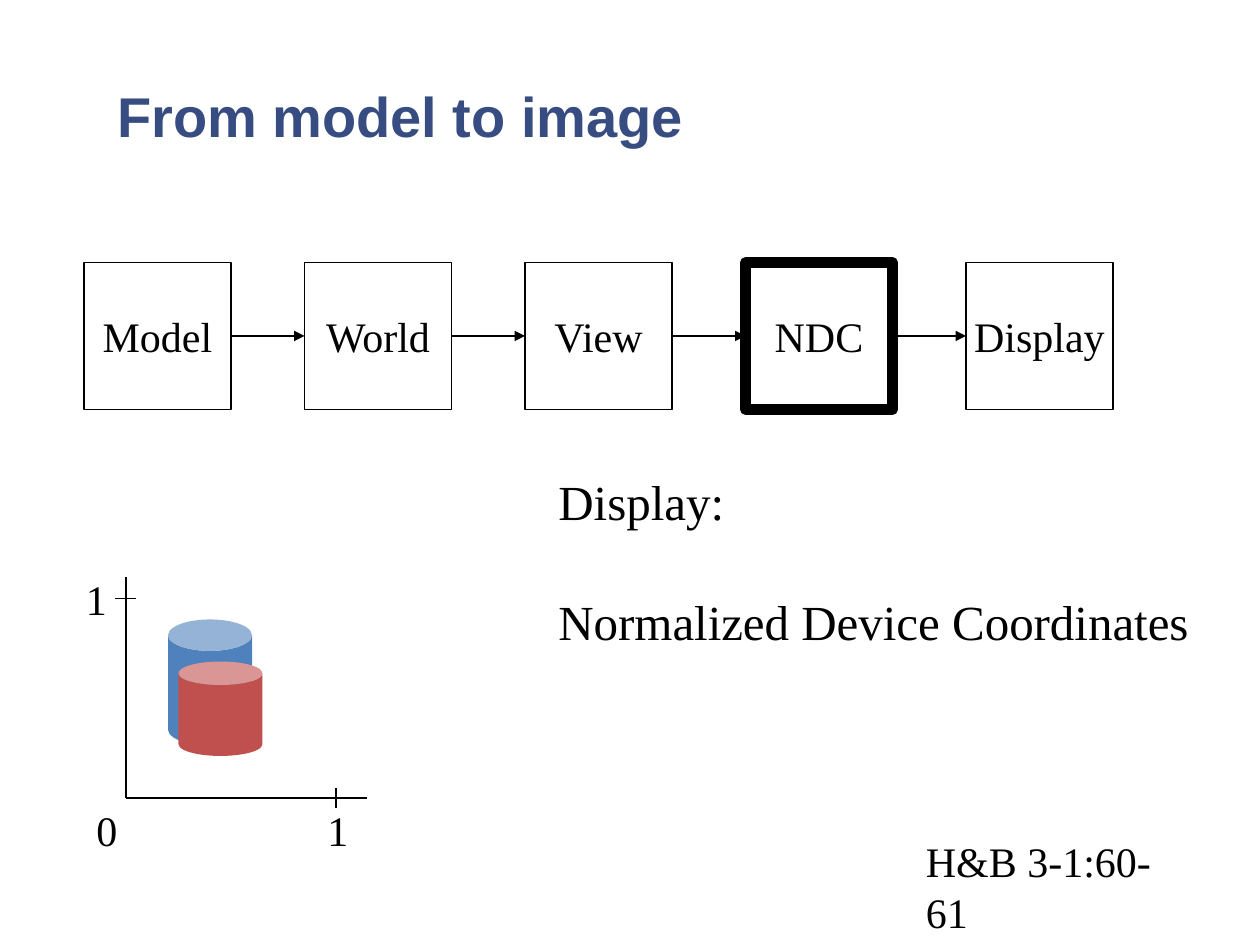
from itertools import pairwise
from lxml.etree import SubElement
from pptx import Presentation
from pptx.dml.color import RGBColor
from pptx.enum.shapes import MSO_CONNECTOR, MSO_SHAPE
from pptx.enum.text import MSO_ANCHOR, MSO_AUTO_SIZE, PP_ALIGN
from pptx.oxml.ns import qn
from pptx.util import Inches, Pt

COLS, ROWS = 120, 90
STAGES = ["Model", "World", "View", "NDC", "Display"]
CURRENT = "NDC"
BOX, PITCH, LEFT, TOP = 14, 21, 8, 25


def grid(*units):
    return [Inches(u * 10 / COLS) for u in units]


def color(value):
    return RGBColor.from_string(value)


def write(tf, text, size=24, font="Times New Roman", fill="000000", bold=False,
          align=PP_ALIGN.LEFT, anchor=MSO_ANCHOR.TOP, gap=0):
    tf.vertical_anchor = anchor
    for i, line in enumerate(text.split("\n")):
        p = tf.add_paragraph() if i else tf.paragraphs[0]
        p.alignment = align
        p.space_before = Pt(gap if i else 0)
        r = p.add_run()
        r.text = line
        r.font.size, r.font.name, r.font.bold = Pt(size), font, bold
        r.font.color.rgb = color(fill)


def add_title(s, text):
    sp = s.shapes.title
    sp.left, sp.top, sp.width, sp.height = [Inches(v) for v in (0.93, 0.64, 8.13, 0.54)]
    tf = sp.text_frame
    tf.margin_left = tf.margin_right = tf.margin_top = tf.margin_bottom = 0
    write(tf, text, size=32, font="Arial", fill="374D81", bold=True,
          anchor=MSO_ANCHOR.BOTTOM)


def add_label(s, text, x, y, w, h=6, **fmt):
    tf = s.shapes.add_textbox(*grid(x, y, w, h)).text_frame
    tf.word_wrap = False
    tf.auto_size = MSO_AUTO_SIZE.SHAPE_TO_FIT_TEXT
    write(tf, text, **fmt)


def add_stage(s, text, x):
    sp = s.shapes.add_shape(MSO_SHAPE.RECTANGLE, *grid(x, TOP, BOX, BOX))
    sp.shadow.inherit = False
    sp.fill.background()
    sp.line.color.rgb = color("000000")
    sp.line.width = Pt(6 if text == CURRENT else 0.75)
    sp.text_frame.word_wrap = False
    write(sp.text_frame, text, align=PP_ALIGN.CENTER, anchor=MSO_ANCHOR.MIDDLE)


def add_line(s, x1, y1, x2, y2, arrow=False):
    c = s.shapes.add_connector(MSO_CONNECTOR.STRAIGHT, *grid(x1, y1, x2, y2))
    c.line.color.rgb = color("000000")
    c.line.width = Pt(0.75)
    if arrow:
        SubElement(c.line._get_or_add_ln(), qn("a:tailEnd"), type="triangle")
    SubElement(c._element.spPr, qn("a:effectLst"))


def add_can(s, x, y, w, h, rim, fill):
    sp = s.shapes.add_shape(MSO_SHAPE.CAN, *grid(x, y, w, h))
    sp.shadow.inherit = False
    sp.adjustments[0] = rim
    sp.fill.solid()
    sp.fill.fore_color.rgb = color(fill)
    sp.line.fill.background()


def add_pipeline(s):
    lefts = [LEFT + PITCH * i for i in range(len(STAGES))]
    middle = TOP + BOX / 2
    for text, x in zip(STAGES, lefts):
        add_stage(s, text, x)
    for x, following in pairwise(lefts):
        add_line(s, x + BOX, middle, following, middle, arrow=True)


def add_plot(s):
    add_can(s, 16, 59, 8, 12, 0.375, "4F81BD")
    add_can(s, 17, 63, 8, 9, 0.28, "C0504D")
    add_line(s, 12, 55, 12, 76)
    add_line(s, 12, 76, 35, 76)
    add_line(s, 32, 75, 32, 77)
    add_line(s, 11, 57, 13, 57)
    for text, x, y in [("0", 8, 76), ("1", 30, 76), ("1", 7, 54)]:
        add_label(s, text, x, y, 4.4)


def main():
    prs = Presentation()
    prs.slide_width, prs.slide_height = grid(COLS, ROWS)
    s = prs.slides.add_slide(prs.slide_layouts[5])
    add_title(s, "From model to image")
    add_pipeline(s)
    add_plot(s)
    add_label(s, "Display:\nNormalized Device Coordinates", 52, 44.3, 62.4, 18,
              size=28, gap=35)
    add_label(s, "H&B 3-1:60-61", 87, 79, 27.8)
    prs.save("out.pptx")


if __name__ == "__main__":
    main()
